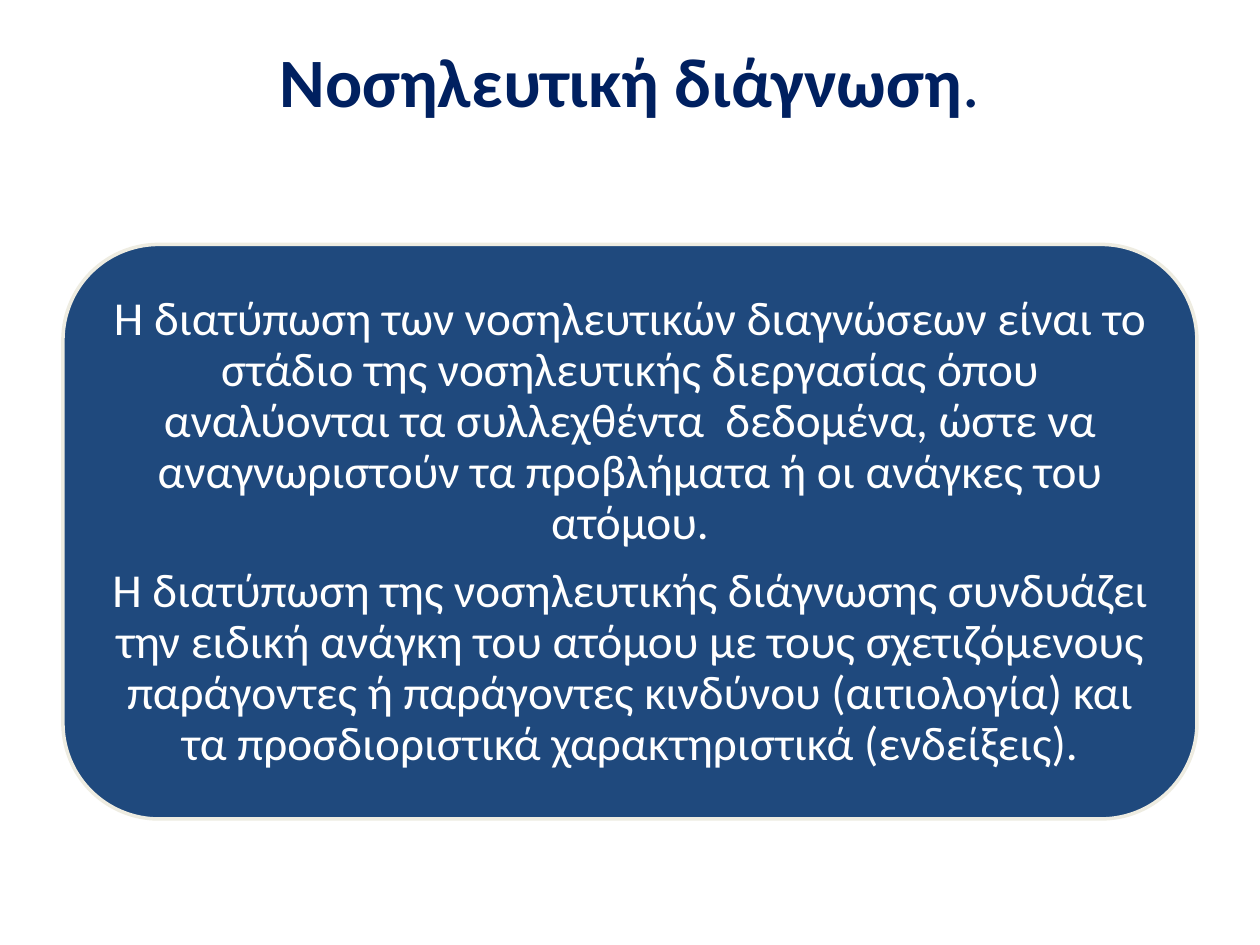
from pptx import Presentation
from pptx.dml.color import RGBColor
from pptx.enum.shapes import MSO_SHAPE
from pptx.enum.text import MSO_ANCHOR, PP_ALIGN
from pptx.util import Pt

ROUNDED = MSO_SHAPE.ROUNDED_RECTANGLE
CENTER = PP_ALIGN.CENTER
TOP, MIDDLE = MSO_ANCHOR.TOP, MSO_ANCHOR.MIDDLE

NAVY, BLUE, CREAM, WHITE = "002060", "1F497D", "EEECE1", "FFFFFF"

TITLE = [[("Νοσηλευτική διάγνωση", True), (".", False)]]
BODY = [
    [("Η διατύπωση των νοσηλευτικών διαγνώσεων είναι το στάδιο της "
      "νοσηλευτικής διεργασίας όπου αναλύονται τα συλλεχθέντα  δεδομένα, "
      "ώστε να αναγνωριστούν τα προβλήματα ή οι ανάγκες του ατόμου.", False)],
    [("Η διατύπωση της νοσηλευτικής διάγνωσης συνδυάζει την ειδική ανάγκη "
      "του ατόμου με τους σχετιζόμενους παράγοντες ή παράγοντες κινδύνου "
      "(αιτιολογία) και τα προσδιοριστικά χαρακτηριστικά (ενδείξεις).", False)],
]


def color(value):
    return RGBColor.from_string(value)


class Page:
    """Holds the text style and the slide being filled."""

    font = "Calibri"

    def __init__(self, deck):
        self.slide = deck.slides.add_slide(deck.slide_layouts[6])

    def panel(self, left, top, width, height, fill, line):
        shape = self.slide.shapes.add_shape(
            ROUNDED, Pt(left), Pt(top), Pt(width), Pt(height))
        shape.shadow.inherit = False
        shape.fill.solid()
        shape.fill.fore_color.rgb = color(fill)
        shape.line.color.rgb = color(line)
        shape.line.width = Pt(2)

    def text(self, left, top, width, height, paragraphs, size, ink,
             anchor=MIDDLE, inset=(8, 8), spacing=1.0, after=0):
        """Add centred paragraphs, each a list of (words, bold) runs."""
        box = self.slide.shapes.add_textbox(
            Pt(left), Pt(top), Pt(width), Pt(height))
        frame = box.text_frame
        frame.word_wrap = True
        frame.vertical_anchor = anchor
        frame.margin_left = frame.margin_right = Pt(inset[0])
        frame.margin_top = frame.margin_bottom = Pt(inset[1])
        for index, runs in enumerate(paragraphs):
            para = frame.add_paragraph() if index else frame.paragraphs[0]
            para.alignment = CENTER
            para.line_spacing = spacing
            para.space_after = Pt(after)
            for words, bold in runs:
                span = para.add_run()
                span.text = words
                span.font.name = self.font
                span.font.size = Pt(size)
                span.font.bold = bold
                span.font.color.rgb = color(ink)


def main():
    deck = Presentation()
    deck.slide_width, deck.slide_height = Pt(720), Pt(540)
    page = Page(deck)
    page.text(36, 21.6, 648, 90, TITLE, 39.6, NAVY, anchor=TOP, inset=(7.2, 0))
    page.panel(36, 139.7, 648, 328.3, BLUE, CREAM)
    page.text(52, 156, 616, 296.6, BODY, 27, WHITE, spacing=0.9, after=9.45)
    deck.save("out.pptx")


if __name__ == "__main__":
    main()
